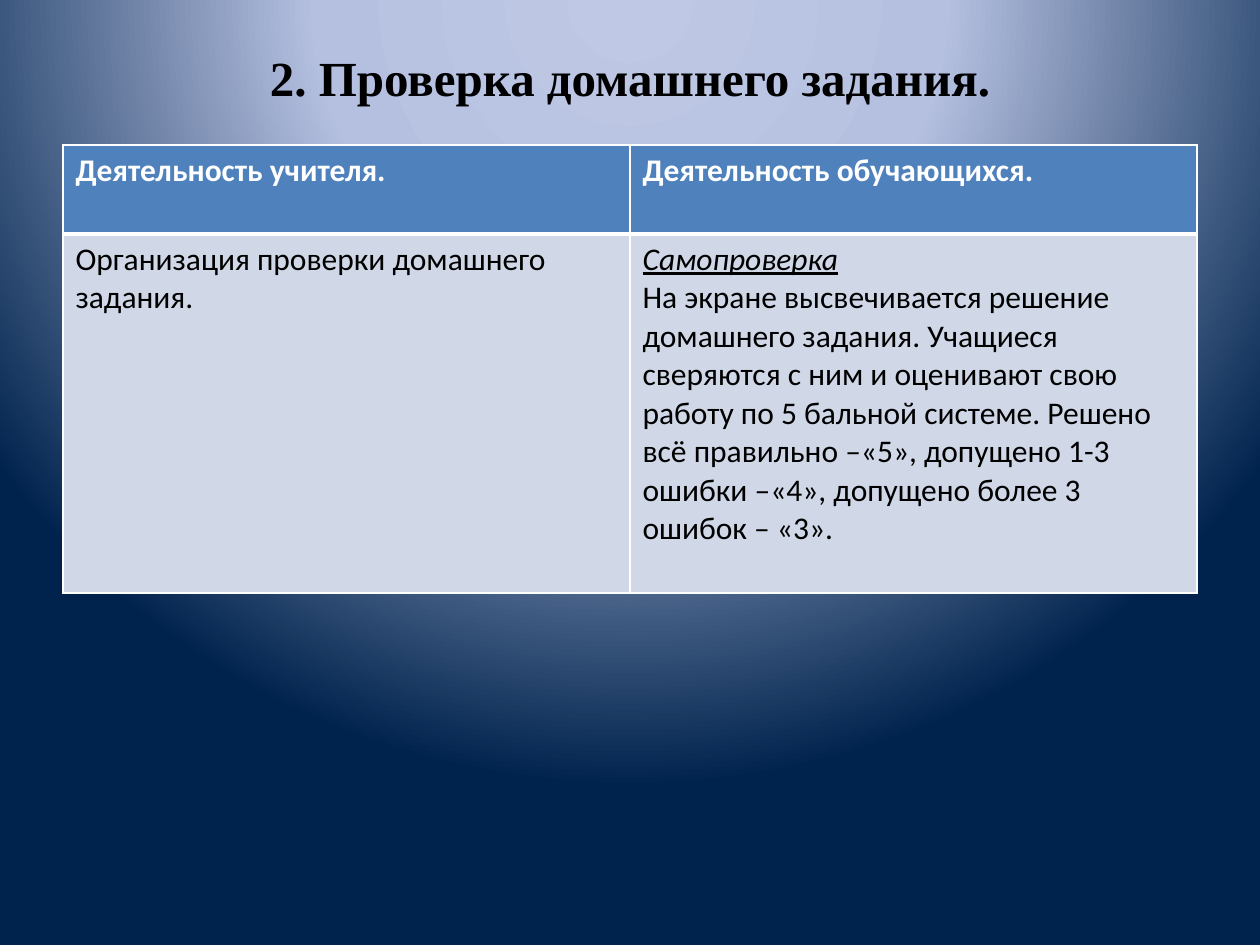
from collections import namedtuple
from dataclasses import dataclass

from lxml.etree import SubElement
from pptx import Presentation
from pptx.dml.color import RGBColor
from pptx.enum.text import MSO_ANCHOR, PP_ALIGN
from pptx.oxml import parse_xml
from pptx.oxml.ns import nsdecls, qn
from pptx.util import Cm, Pt

Box = namedtuple("Box", "left top width height")


@dataclass(frozen=True)
class Theme:
    title_font: str = "Times New Roman"
    body_font: str = "Calibri"
    title_size: int = 28
    body_size: int = 18
    dark: str = "000000"
    light: str = "FFFFFF"
    header_fill: str = "4F81BD"
    body_fill: str = "D0D8E8"
    glow: tuple = ((0, "BFC9E5"), (40, "B5C0E0"), (100, "00234D"))


THEME = Theme()
TITLE = "2. Проверка домашнего задания."
HEADINGS = ("Деятельность учителя.", "Деятельность обучающихся.")
TEACHER = "Организация проверки домашнего задания."
SELF_CHECK = "Самопроверка"
PUPILS = (
    "На экране высвечивается решение домашнего задания. Учащиеся сверяются "
    "с ним и оценивают свою работу по 5 бальной системе. Решено всё правильно "
    "–«5», допущено 1-3 ошибки –«4», допущено более 3 ошибок – «3»."
)


def add_span(para, text, font, size, color, bold=False, emphasis=False):
    span = para.add_run()
    span.text = text
    span.font.name = font
    span.font.size = Pt(size)
    span.font.color.rgb = RGBColor.from_string(color)
    span.font.bold = bold
    span.font.italic = span.font.underline = emphasis


def paint_background(page):
    """Radial glow centred above the page."""
    stops = "".join(
        f'<a:gs pos="{place * 1000}"><a:srgbClr val="{color}"/></a:gs>'
        for place, color in THEME.glow
    )
    background = parse_xml(
        f'<p:bg {nsdecls("p", "a")}><p:bgPr><a:gradFill rotWithShape="1">'
        f"<a:gsLst>{stops}</a:gsLst>"
        '<a:path path="circle">'
        '<a:fillToRect l="50000" t="-80000" r="50000" b="180000"/></a:path>'
        "</a:gradFill><a:effectLst/></p:bgPr></p:bg>"
    )
    page.element.cSld.insert(0, background)


def add_title(page, box):
    title = page.shapes.title
    title.left, title.top, title.width, title.height = box
    frame = title.text_frame
    frame.word_wrap = True
    frame.vertical_anchor = MSO_ANCHOR.MIDDLE
    frame.margin_top, frame.margin_bottom = Cm(0.13), Cm(0.7)
    para = frame.paragraphs[0]
    para.alignment = PP_ALIGN.CENTER
    add_span(para, TITLE, THEME.title_font, THEME.title_size, THEME.dark, bold=True)


def style_cell(cell, fill, top=1, bottom=1):
    """Border lines come before the fill in the cell properties."""
    properties = cell._tc.get_or_add_tcPr()
    for side, width in (("L", 1), ("R", 1), ("T", top), ("B", bottom)):
        line = SubElement(properties, qn(f"a:ln{side}"), w=str(Pt(width)))
        solid = SubElement(line, qn("a:solidFill"))
        SubElement(solid, qn("a:srgbClr"), val=THEME.light)
    cell.fill.solid()
    cell.fill.fore_color.rgb = RGBColor.from_string(fill)


def add_activity_table(page, box):
    table = page.shapes.add_table(2, 2, *box).table
    header_height = Cm(1.8)
    table.rows[0].height = header_height
    table.rows[1].height = box.height - header_height

    # Header row
    for column, heading in enumerate(HEADINGS):
        cell = table.cell(0, column)
        style_cell(cell, THEME.header_fill, bottom=3)
        add_span(cell.text_frame.paragraphs[0], heading, THEME.body_font,
                 THEME.body_size, THEME.light, bold=True)

    # Activities: each paragraph is a text and whether it is emphasised
    activities = (((TEACHER, False),), ((SELF_CHECK, True), (PUPILS, False)))
    for column, paragraphs in enumerate(activities):
        cell = table.cell(1, column)
        style_cell(cell, THEME.body_fill, top=3)
        frame = cell.text_frame
        for index, (text, emphasis) in enumerate(paragraphs):
            para = frame.add_paragraph() if index else frame.paragraphs[0]
            add_span(para, text, THEME.body_font, THEME.body_size, THEME.dark,
                     emphasis=emphasis)


def main():
    deck = Presentation()
    deck.slide_width, deck.slide_height = Cm(25.4), Cm(19.05)
    page = deck.slides.add_slide(deck.slide_layouts[5])
    margin = Cm(1.27)
    content_width = deck.slide_width - 2 * margin
    paint_background(page)
    add_title(page, Box(margin, Cm(0.76), content_width, Cm(2.16)))
    add_activity_table(page, Box(margin, Cm(2.92), content_width, Cm(9.04)))
    deck.save("out.pptx")


if __name__ == "__main__":
    main()
